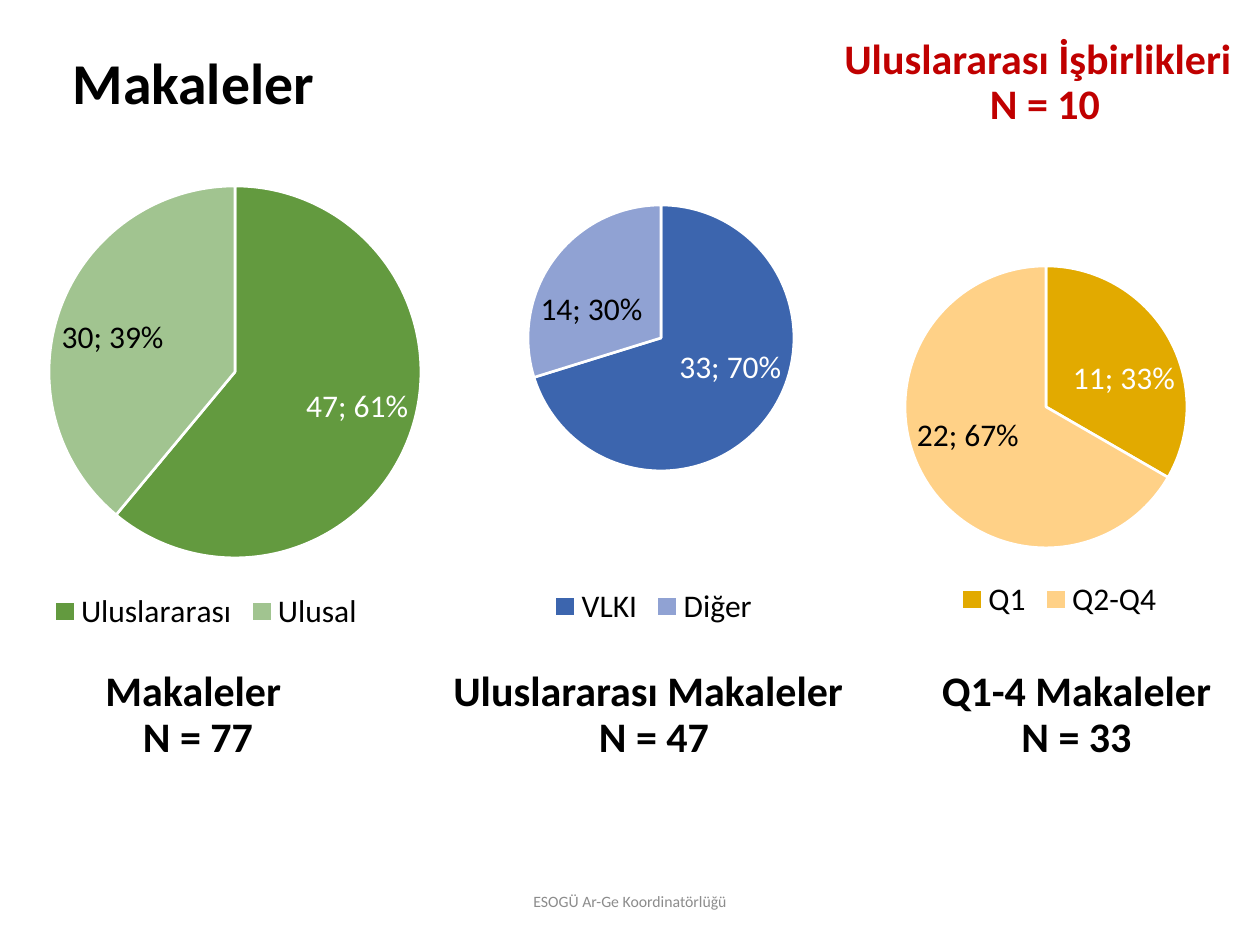
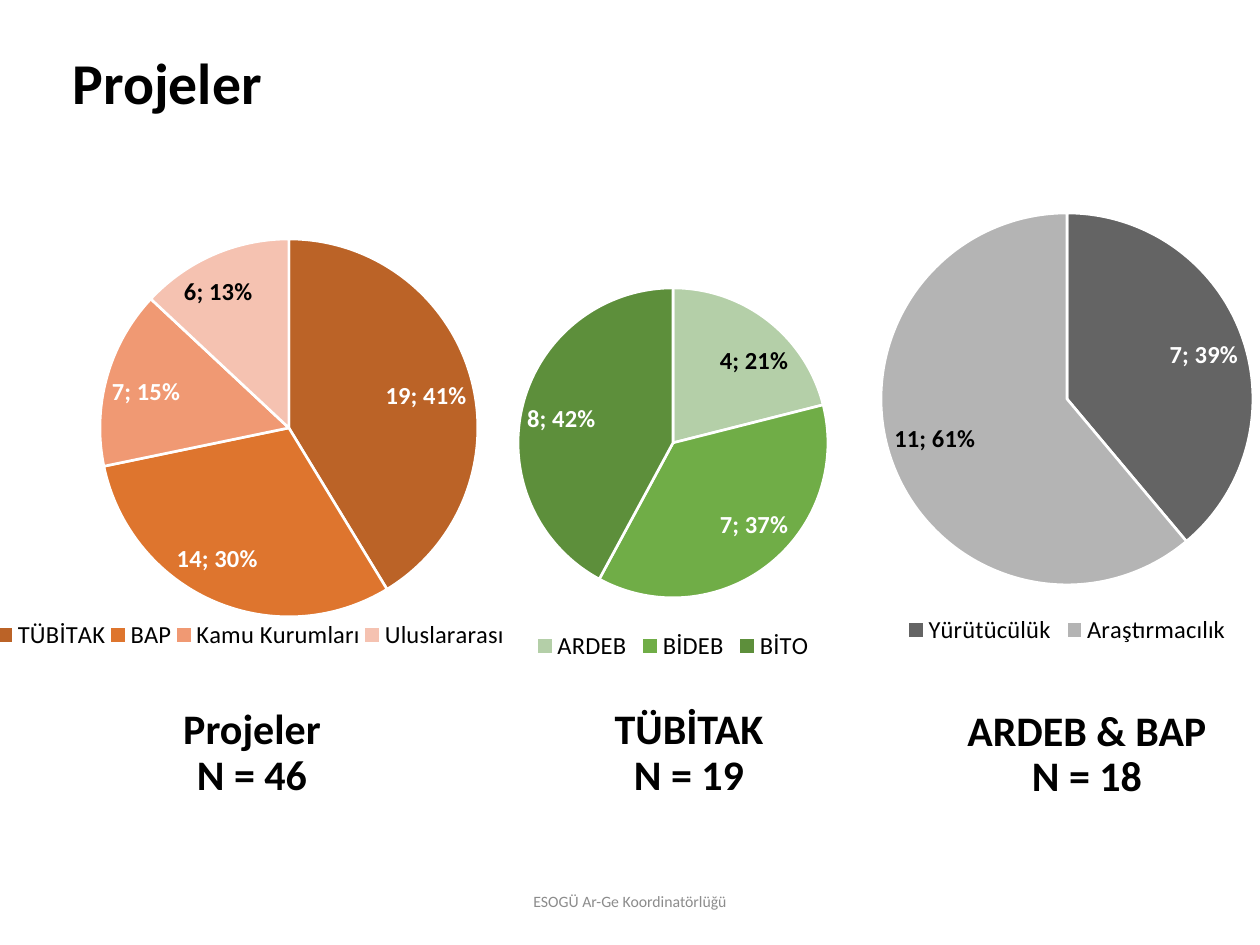
from typing import NamedTuple, Optional

from pptx import Presentation
from pptx.chart.data import CategoryChartData
from pptx.dml.color import RGBColor
from pptx.enum.chart import XL_CHART_TYPE as ChartType
from pptx.enum.chart import XL_LABEL_POSITION as LabelPosition
from pptx.enum.chart import XL_LEGEND_POSITION as LegendPosition
from pptx.enum.text import MSO_ANCHOR as Anchor
from pptx.enum.text import PP_ALIGN as Align
from pptx.oxml import parse_xml
from pptx.oxml.ns import nsdecls
from pptx.util import Emu, Pt

# Shared look
PX_PER_INCH = 126
FONT_NAME = "Calibri"
BLACK, WHITE, RED, GREY = "000000", "FFFFFF", "C00000", "8C8C8C"
FOOTER_TEXT = "ESOGÜ Ar-Ge Koordinatörlüğü"
LINE_SPACING = 0.9


class Box(NamedTuple):
    left: int
    top: int
    width: int
    height: int


TITLE_BOX = Box(60, 28, 1086, 115)
FOOTER_BOX = Box(417, 877, 426, 50)


class Slice(NamedTuple):
    name: str
    value: int
    color: str
    label_color: str = WHITE


class Pie(NamedTuple):
    frame: Box
    center_x: int
    center_y: int
    radius: int
    slices: list[Slice]
    legend: Optional[Box] = None


class Caption(NamedTuple):
    box: Box
    heading: str
    count: int
    heading_align: Align = Align.CENTER
    color: str = BLACK


class Page(NamedTuple):
    title: str
    label_size: int
    bold_labels: bool
    pies: list[Pie]
    captions: list[Caption]


# Slide content
PAGES = [
    Page("Makaleler", 18, False, [
        Pie(Box(-42, 149, 496, 488), 235, 372, 186, [
            Slice("Uluslararası", 47, "639A3F"),
            Slice("Ulusal", 30, "A1C490", BLACK)]),
        Pie(Box(824, 137, 471, 488), 1046, 407, 141, [
            Slice("Q1", 11, "E2AA00"),
            Slice("Q2-Q4", 22, "FFD187", BLACK)]),
        Pie(Box(406, 144, 496, 488), 661, 338, 133, [
            Slice("VLKI", 33, "3C65AE"),
            Slice("Diğer", 14, "90A2D3", BLACK)]),
    ], [
        Caption(Box(93, 670, 210, 92), "Makaleler", 77, Align.LEFT),
        Caption(Box(441, 670, 426, 92), "Uluslararası Makaleler", 47, Align.LEFT),
        Caption(Box(927, 670, 299, 92), "Q1-4 Makaleler", 33),
        Caption(Box(832, 37, 426, 92), "Uluslararası İşbirlikleri", 10,
                Align.LEFT, RED),
    ]),
    Page("Projeler", 14, True, [
        Pie(Box(-35, 192, 576, 491), 289, 428, 189, [
            Slice("TÜBİTAK", 19, "BB6327"),
            Slice("BAP", 14, "DE752E"),
            Slice("Kamu Kurumları", 7, "F09973"),
            Slice("Uluslararası", 6, "F5C2B1", BLACK)],
            legend=Box(-7, 617, 516, 36)),
        Pie(Box(460, 192, 426, 474), 673, 443, 155, [
            Slice("ARDEB", 4, "B4CFA8", BLACK),
            Slice("BİDEB", 7, "70AD47"),
            Slice("BİTO", 8, "5D8F3B")]),
        Pie(Box(854, 195, 426, 455), 1067, 399, 186, [
            Slice("Yürütücülük", 7, "646464"),
            Slice("Araştırmacılık", 11, "B4B4B4", BLACK)]),
    ], [
        Caption(Box(147, 708, 210, 92), "Projeler", 46),
        Caption(Box(476, 708, 426, 92), "TÜBİTAK", 19),
        Caption(Box(948, 709, 278, 92), "ARDEB & BAP", 18),
    ]),
]


# Helpers
def px(length: int) -> Emu:
    return Emu(round(length * 914400 / PX_PER_INCH))


def emu_box(box: Box) -> list[Emu]:
    return [px(length) for length in box]


def rgb(color: str) -> RGBColor:
    return RGBColor.from_string(color)


def set_attributes(target, values: dict) -> None:
    for name, value in values.items():
        setattr(target, name, value)


def set_font(font, size: int, color: str, bold: bool = False) -> None:
    set_attributes(font, {"name": FONT_NAME, "size": Pt(size), "bold": bold})
    font.color.rgb = rgb(color)


def write_line(paragraph, text: str, size: int, color: str, bold: bool,
               align: Align) -> None:
    set_attributes(paragraph, {"alignment": align, "line_spacing": LINE_SPACING})
    run = paragraph.add_run()
    run.text = text
    set_font(run.font, size, color, bold)


def add_text_frame(slide, box: Box):
    frame = slide.shapes.add_textbox(*emu_box(box)).text_frame
    set_attributes(frame, {"word_wrap": True, "vertical_anchor": Anchor.MIDDLE})
    return frame


def set_layout(parent, index: int, area: Box, frame: Box, target: str = "") -> None:
    """Place a chart part at an area given in slide pixels."""
    for old_layout in parent.xpath("./c:layout"):
        parent.remove(old_layout)
    fractions = {
        "x": (area.left - frame.left) / frame.width,
        "y": (area.top - frame.top) / frame.height,
        "w": area.width / frame.width,
        "h": area.height / frame.height,
    }
    modes = "".join(f'<c:{axis}Mode val="edge"/>' for axis in "xy")
    sizes = "".join(f'<c:{key} val="{value:.4f}"/>'
                    for key, value in fractions.items())
    parent.insert(index, parse_xml(
        f'<c:layout {nsdecls("c")}><c:manualLayout>{target}{modes}{sizes}'
        "</c:manualLayout></c:layout>"))


# Slide parts
def draw_title(slide, text: str) -> None:
    title = slide.shapes.title
    set_attributes(title, dict(zip(Box._fields, emu_box(TITLE_BOX))))
    title.text_frame.vertical_anchor = Anchor.MIDDLE
    write_line(title.text_frame.paragraphs[0], text, 33, BLACK, True, Align.LEFT)


def draw_footer(slide) -> None:
    frame = add_text_frame(slide, FOOTER_BOX)
    write_line(frame.paragraphs[0], FOOTER_TEXT, 9, GREY, False, Align.CENTER)


def draw_caption(slide, caption: Caption) -> None:
    frame = add_text_frame(slide, caption.box)
    write_line(frame.paragraphs[0], caption.heading, 24, caption.color, True,
               caption.heading_align)
    write_line(frame.add_paragraph(), f"N = {caption.count}", 24, caption.color,
               True, Align.CENTER)


def draw_pie(slide, pie: Pie, label_size: int, bold_labels: bool) -> None:
    data = CategoryChartData()
    data.categories = [part.name for part in pie.slices]
    data.add_series("Series 1", [part.value for part in pie.slices])
    chart = slide.shapes.add_chart(ChartType.PIE, *emu_box(pie.frame), data).chart
    set_attributes(chart, {"has_title": False, "has_legend": True})
    set_font(chart.font, label_size, BLACK)
    set_attributes(chart.legend, {"position": LegendPosition.BOTTOM,
                                  "include_in_layout": False})
    set_font(chart.legend.font, label_size, BLACK)

    # Slices and their labels
    plot = chart.plots[0]
    plot.vary_by_categories = True
    series = plot.series[0]
    labels = series.data_labels
    set_attributes(labels, {"show_value": True, "show_percentage": True,
                            "position": LabelPosition.BEST_FIT})
    set_font(labels.font, label_size, BLACK, bold_labels)
    for index, part in enumerate(pie.slices):
        point = series.points[index]
        point.format.fill.solid()
        point.format.fill.fore_color.rgb = rgb(part.color)
        point.format.line.color.rgb = rgb(WHITE)
        point.format.line.width = Pt(1.5)
        if part.label_color != BLACK:
            label = point.data_label
            set_font(label.font, label_size, part.label_color, bold_labels)
            label.position = LabelPosition.BEST_FIT

    # Value and percentage joined by a semicolon, on a clear background
    root = chart.element
    for show_percent in root.xpath(".//c:dLbls//c:showPercent"):
        show_percent.set("val", "1")
    for show_bubble in root.xpath(".//c:dLbls//c:showBubbleSize"):
        show_bubble.addnext(parse_xml(
            f'<c:separator {nsdecls("c")}>; </c:separator>'))
    root.xpath("./c:chart")[0].addnext(parse_xml(
        f'<c:spPr {nsdecls("c", "a")}><a:noFill/><a:ln><a:noFill/></a:ln></c:spPr>'))

    # Position of the circle and the legend
    diameter = 2 * pie.radius
    circle = Box(pie.center_x - pie.radius, pie.center_y - pie.radius,
                 diameter, diameter)
    set_layout(root.xpath(".//c:plotArea")[0], 0, circle, pie.frame,
               '<c:layoutTarget val="inner"/>')
    if pie.legend:
        set_layout(root.xpath(".//c:legend")[0], 1, pie.legend, pie.frame)


def main() -> None:
    presentation = Presentation()
    set_attributes(presentation, {"slide_width": px(1260), "slide_height": px(945)})
    title_only = presentation.slide_layouts[5]
    for page in PAGES:
        slide = presentation.slides.add_slide(title_only)
        draw_title(slide, page.title)
        draw_footer(slide)
        for pie in page.pies:
            draw_pie(slide, pie, page.label_size, page.bold_labels)
        for caption in page.captions:
            draw_caption(slide, caption)
    presentation.save("out.pptx")


if __name__ == "__main__":
    main()
